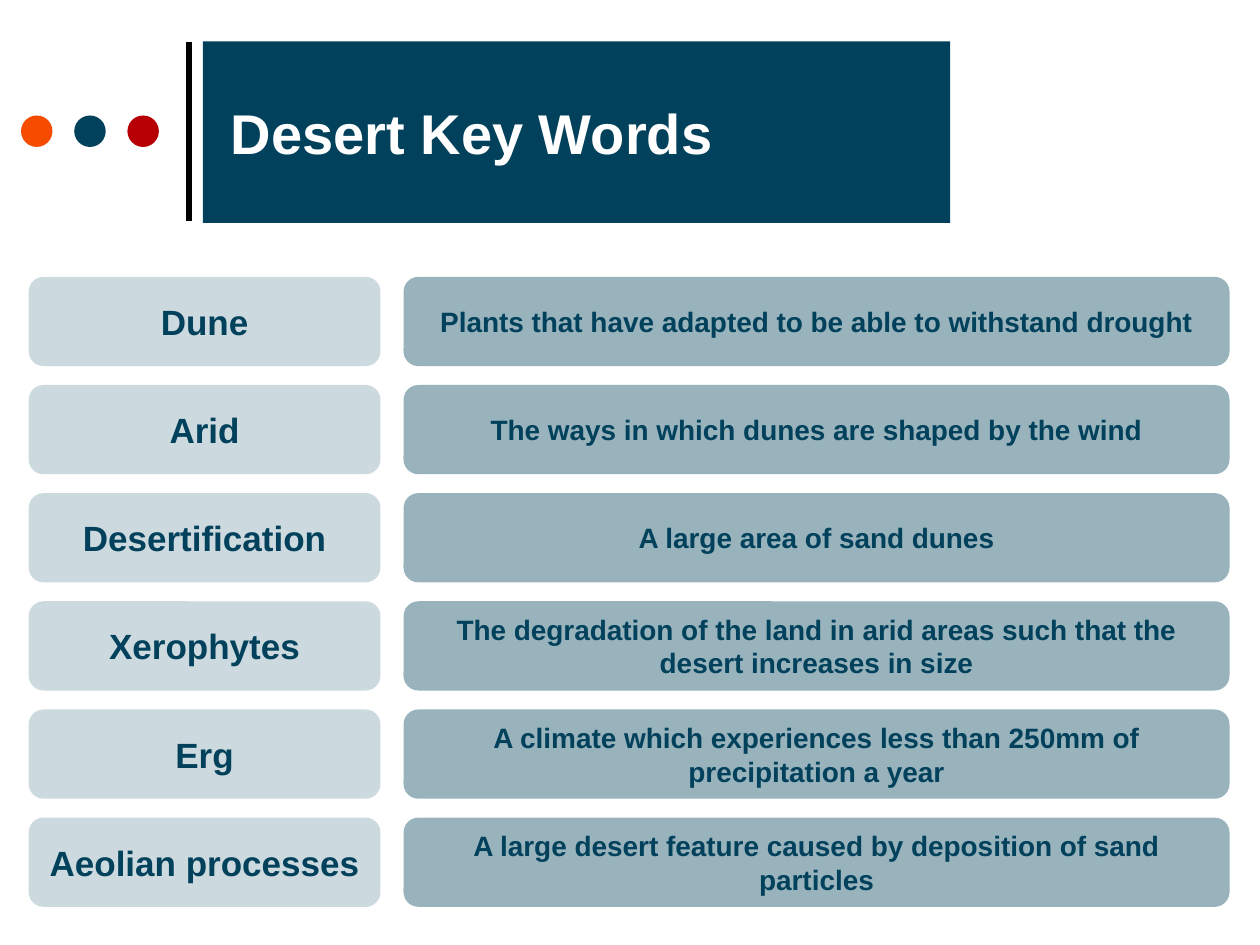
from pptx import Presentation
from pptx.dml.color import RGBColor
from pptx.enum.shapes import MSO_CONNECTOR, MSO_SHAPE
from pptx.enum.text import MSO_ANCHOR, MSO_AUTO_SIZE, PP_ALIGN
from pptx.oxml.ns import qn
from pptx.util import Pt
from lxml import etree

OVAL = MSO_SHAPE.OVAL
ROUNDED = MSO_SHAPE.ROUNDED_RECTANGLE
STRAIGHT = MSO_CONNECTOR.STRAIGHT
MIDDLE = MSO_ANCHOR.MIDDLE
NO_AUTOFIT = MSO_AUTO_SIZE.NONE
LEFT, CENTER = PP_ALIGN.LEFT, PP_ALIGN.CENTER

FONT = "Arial"
COLORS = {
    "navy": "01415B",
    "orange": "F54C00",
    "red": "B70005",
    "term": "CCD9DE",
    "definition": "99B3BD",
    "white": "FFFFFF",
    "black": "000000",
}
ROWS = [
    ("Dune", "Plants that have adapted to be able to withstand drought"),
    ("Arid", "The ways in which dunes are shaped by the wind"),
    ("Desertification", "A large area of sand dunes"),
    ("Xerophytes", "The degradation of the land in arid areas such that the desert increases in size"),
    ("Erg", "A climate which experiences less than 250mm of precipitation a year"),
    ("Aeolian processes", "A large desert feature caused by deposition of sand particles"),
]
ROW_TOP, ROW_PITCH, ROW_HEIGHT = 158.2, 61.8, 51


def color(name):
    return RGBColor.from_string(COLORS[name])


def fill_shape(shape, fill):
    shape.fill.solid()
    shape.fill.fore_color.rgb = color(fill)
    shape.line.fill.background()


def set_text(shape, text, size, text_color, alignment):
    text_frame = shape.text_frame
    text_frame.text = text
    text_frame.word_wrap = True
    text_frame.auto_size = NO_AUTOFIT
    text_frame.vertical_anchor = MIDDLE
    paragraph = text_frame.paragraphs[0]
    paragraph.alignment = alignment
    font = paragraph.runs[0].font
    font.name, font.size, font.bold = FONT, Pt(size), True
    font.color.rgb = color(text_color)


def add_filled_shape(slide, kind, left, top, width, height, fill):
    shape = slide.shapes.add_shape(kind, Pt(left), Pt(top), Pt(width), Pt(height))
    shape.shadow.inherit = False
    fill_shape(shape, fill)
    return shape


def add_divider(slide, x, top, bottom):
    connector = slide.shapes.add_connector(STRAIGHT, Pt(x), Pt(top), Pt(x), Pt(bottom))
    connector.line.color.rgb = color("black")
    connector.line.width = Pt(3)
    etree.SubElement(connector._element.spPr, qn("a:effectLst"))


def add_dots(slide):
    for index, fill in enumerate(("orange", "navy", "red")):
        add_filled_shape(slide, OVAL, 12 + 30.4 * index, 66, 18, 18, fill)


def format_title(slide, text):
    title = slide.shapes.title
    title.left, title.top, title.width, title.height = Pt(116), Pt(23.6), Pt(427), Pt(103.8)
    fill_shape(title, "navy")
    set_text(title, text, 32, "white", LEFT)
    title.text_frame.margin_left = Pt(16)


def add_card(slide, left, top, width, fill, text, size):
    card = add_filled_shape(slide, ROUNDED, left, top, width, ROW_HEIGHT, fill)
    set_text(card, text, size, "navy", CENTER)


def main():
    """Build the desert key words matching slide."""
    presentation = Presentation()
    presentation.slide_width, presentation.slide_height = Pt(720), Pt(540)
    slide = presentation.slides.add_slide(presentation.slide_layouts[5])
    add_divider(slide, 108, 23.8, 126)
    add_dots(slide)
    format_title(slide, "Desert Key Words")
    for index, (term, definition) in enumerate(ROWS):
        top = ROW_TOP + ROW_PITCH * index
        add_card(slide, 16.4, top, 201, "term", term, 20)
        add_card(slide, 230.6, top, 472, "definition", definition, 16)
    presentation.save("out.pptx")


if __name__ == "__main__":
    main()
